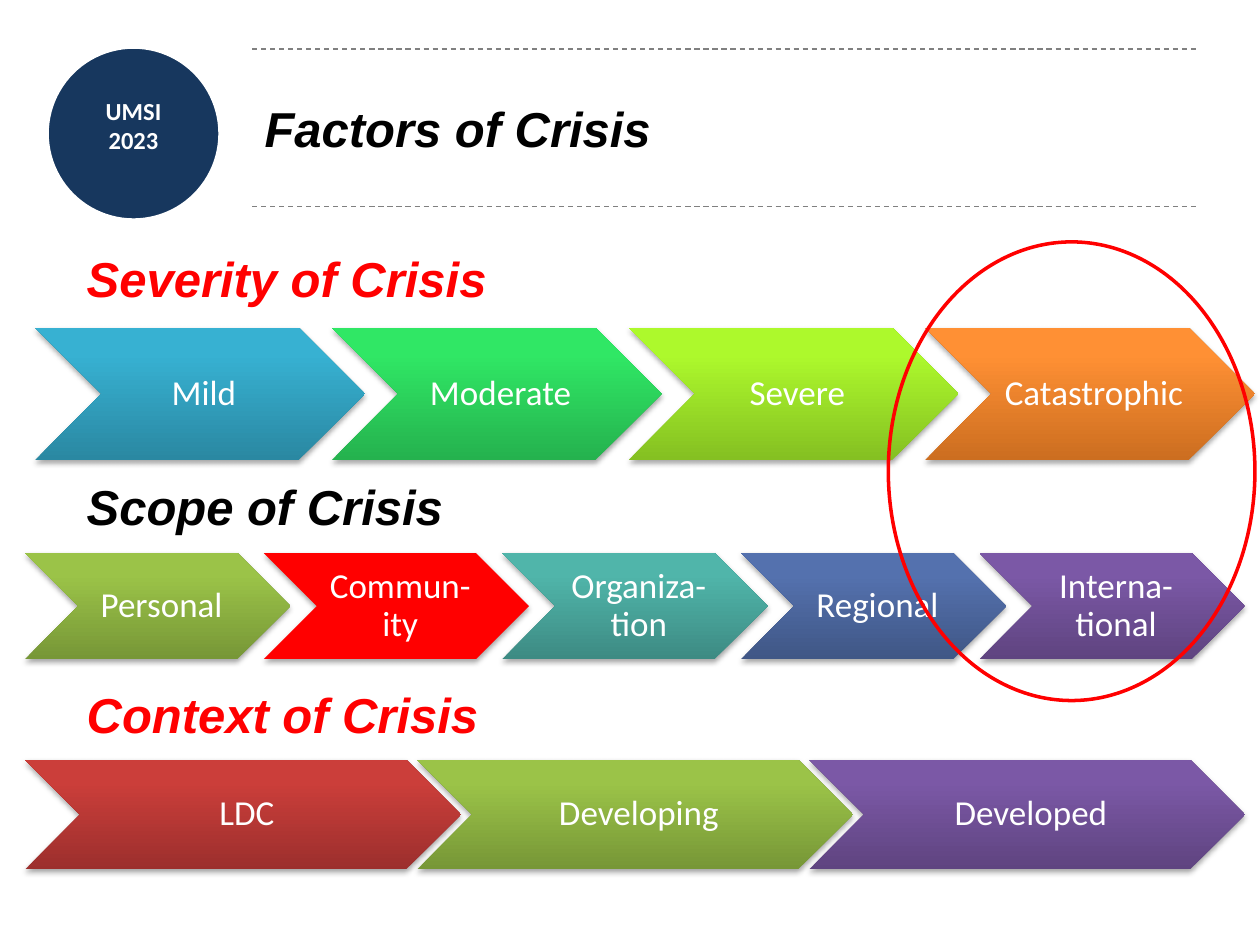
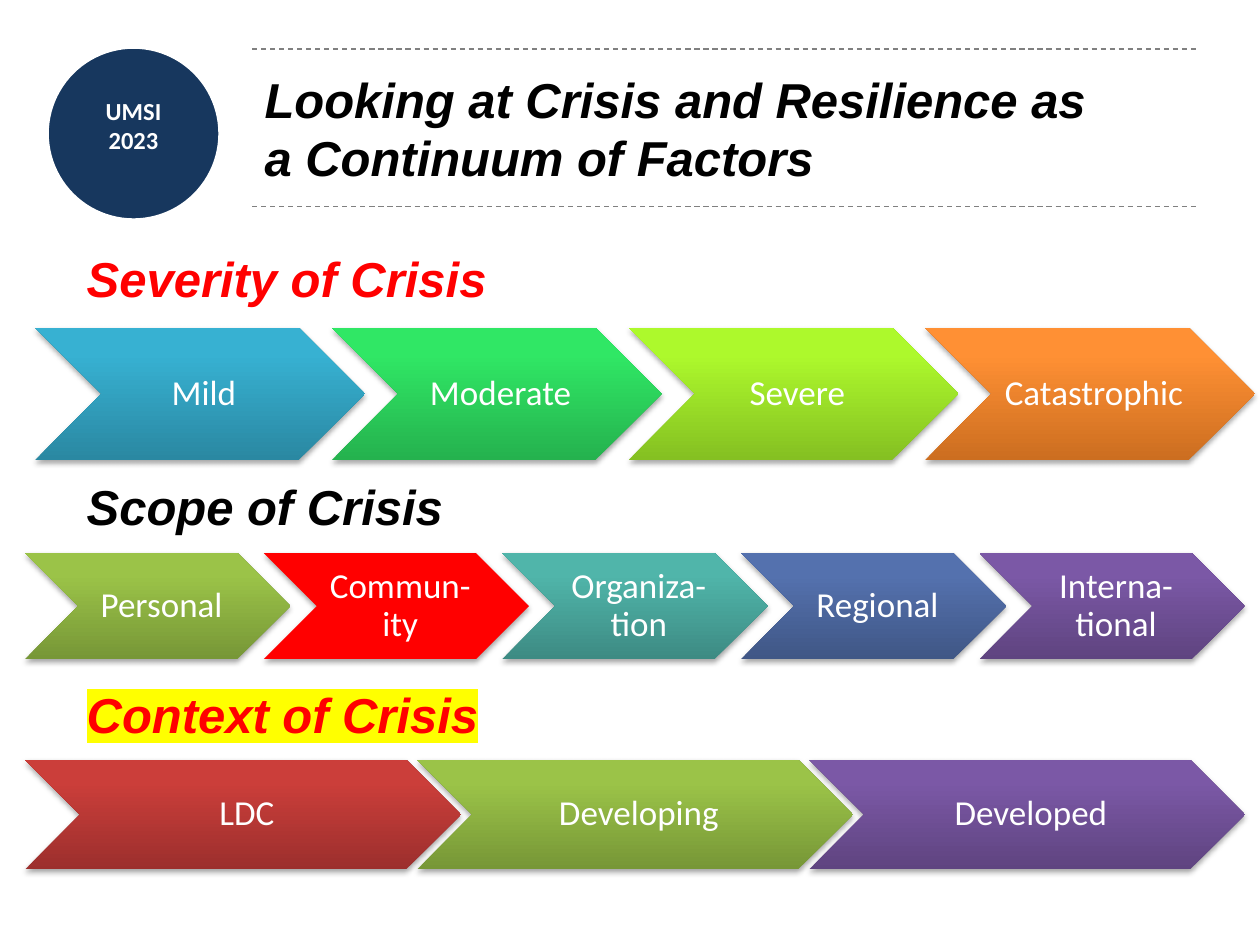
from lxml import etree
from pptx import Presentation
from pptx.dml.color import RGBColor
from pptx.enum.dml import MSO_LINE
from pptx.enum.shapes import MSO_CONNECTOR, MSO_SHAPE
from pptx.enum.text import MSO_ANCHOR, PP_ALIGN
from pptx.oxml.ns import qn
from pptx.util import Inches, Pt

COLORS = {
    "white": "FFFFFF", "black": "000000", "red": "FF0000", "navy": "17375E",
    "gray": "808080", "yellow": "FFFF00",
}
GRADIENTS = {
    "green": ("779737", "9BC348"), "teal": ("3D8B83", "50B5AA"),
    "blue": ("405786", "5471AE"), "purple": ("5F4480", "7B58A6"),
    "sky": ("2A88A2", "37B1D2"), "mint": ("25B24E", "30E765"),
    "lime": ("85C022", "ADF92C"), "orange": ("CC6E20", "FF9034"),
    "brick": ("9C2F2D", "CB3E3A"),
}
SEVERITY = [("Mild", "sky"), ("Moderate", "mint"), ("Severe", "lime"),
            ("Catastrophic", "orange")]
SCOPE = [("Personal", "green"), ("Commun-ity", "red"), ("Organiza-tion", "teal"),
         ("Regional", "blue"), ("Interna-tional", "purple")]
CONTEXT = [("LDC", "brick"), ("Developing", "green"), ("Developed", "purple")]
ROW_WIDTH = 9.68
PITCH = 0.9


def rgb(name):
    """Return the named colour."""
    return RGBColor.from_string(COLORS[name])


def style(p, size, color, name="Calibri", bold=None, italic=None):
    """Set the font of a whole paragraph."""
    f = p.font
    f.size, f.name, f.bold, f.italic = Pt(size), name, bold, italic
    f.color.rgb = rgb(color)


def add_effects(shape, shadow=False):
    """Replace the theme effects with none or with a soft shadow below."""
    effects = etree.SubElement(shape._element.spPr, qn("a:effectLst"))
    if shadow:
        outer = etree.SubElement(effects, qn("a:outerShdw"), blurRad="40000",
                                 dist="23000", dir="5400000", rotWithShape="0")
        clr = etree.SubElement(outer, qn("a:srgbClr"), val=COLORS["black"])
        etree.SubElement(clr, qn("a:alpha"), val="35000")


def add_ellipse(s, x, y, w, h, line, weight, fill=None):
    """Add an outlined ellipse, filled if a colour is given."""
    sp = s.shapes.add_shape(MSO_SHAPE.OVAL, Inches(x), Inches(y), Inches(w), Inches(h))
    sp.shadow.inherit = False
    sp.line.color.rgb, sp.line.width = rgb(line), Pt(weight)
    if fill:
        sp.fill.solid()
        sp.fill.fore_color.rgb = rgb(fill)
    else:
        sp.fill.background()
    return sp


def add_badge(s, x, y, d):
    """Add the round badge with the event name."""
    tf = add_ellipse(s, x, y, d, d, "white", 2.5, "navy").text_frame
    tf.margin_left = tf.margin_right = tf.margin_top = 0
    tf.margin_bottom = Inches(0.13)
    tf.vertical_anchor = MSO_ANCHOR.MIDDLE
    tf.text = "UMSI\n2023"
    for p in tf.paragraphs:
        p.alignment = PP_ALIGN.CENTER
        style(p, 14, "white", bold=True)


def add_title(s, text, x, y, w, h):
    """Place the title between two dashed rules."""
    for rule_y in (y, y + h):
        rule = s.shapes.add_connector(MSO_CONNECTOR.STRAIGHT, Inches(x), Inches(rule_y),
                                      Inches(x + w), Inches(rule_y))
        rule.line.color.rgb, rule.line.width = rgb("gray"), Pt(0.75)
        rule.line.dash_style = MSO_LINE.DASH
        add_effects(rule)
    title = s.shapes.title
    title.left, title.top, title.width, title.height = map(Inches, (x, y, w, h))
    tf = title.text_frame
    tf.text = text
    tf.word_wrap, tf.vertical_anchor = True, MSO_ANCHOR.MIDDLE
    p = tf.paragraphs[0]
    p.alignment = PP_ALIGN.LEFT
    style(p, 28, "black", "Arial", True, True)


def add_heading(s, text, x, y, color, highlight=False):
    """Add the heading above a row of chevrons."""
    tf = s.shapes.add_textbox(Inches(x), Inches(y), Inches(3.6), Inches(0.57)).text_frame
    tf.word_wrap = True
    p = tf.paragraphs[0]
    r = p.add_run()
    r.text = text
    style(p, 28, color, "Arial", True, True)
    if highlight:
        mark = etree.SubElement(r._r.get_or_add_rPr(), qn("a:highlight"))
        etree.SubElement(mark, qn("a:srgbClr"), val=COLORS["yellow"])


def fill_chevron(fill, color):
    """Fill with a vertical gradient, or plainly where none has that name."""
    if color not in GRADIENTS:
        fill.solid()
        fill.fore_color.rgb = rgb(color)
        return
    fill.gradient()
    fill.gradient_angle = 90
    for stop, position, value in zip(fill.gradient_stops, (0, 0.8), GRADIENTS[color]):
        stop.position = position
        stop.color.rgb = RGBColor.from_string(value)


def add_chevrons(s, steps, x, y, h):
    """Add a row of overlapping chevrons that spans the row width."""
    w = ROW_WIDTH / (1 + PITCH * (len(steps) - 1))
    for i, (label, color) in enumerate(steps):
        sp = s.shapes.add_shape(MSO_SHAPE.CHEVRON, Inches(x + i * PITCH * w), Inches(y),
                                Inches(w), Inches(h))
        fill_chevron(sp.fill, color)
        sp.line.fill.background()
        add_effects(sp, shadow=True)
        tf = sp.text_frame
        tf.margin_left = Inches(0.09)
        tf.margin_right = tf.margin_top = tf.margin_bottom = Inches(0.03)
        tf.word_wrap, tf.vertical_anchor = True, MSO_ANCHOR.MIDDLE
        tf.text = label
        p = tf.paragraphs[0]
        p.alignment, p.line_spacing = PP_ALIGN.CENTER, 0.9
        style(p, 20, "white")


def add_factors_slide(prs, title, highlight_context=False):
    """Add a slide with the three factors of crisis."""
    s = prs.slides.add_slide(prs.slide_layouts[5])
    add_badge(s, 0.37, 0.37, 1.38)
    add_title(s, title, 2, 0.39, 7.5, 1.25)
    add_chevrons(s, SCOPE, 0.2, 4.39, 0.84)
    add_heading(s, "Scope of Crisis", 0.59, 3.73, "black")
    add_chevrons(s, SEVERITY, 0.28, 2.6, 1.05)
    add_heading(s, "Severity of Crisis", 0.59, 1.92, "red")
    add_chevrons(s, CONTEXT, 0.2, 6.03, 0.87)
    add_heading(s, "Context of Crisis", 0.59, 5.38, "red", highlight_context)
    return s


def main():
    """Build and save the presentation."""
    prs = Presentation()
    prs.slide_width, prs.slide_height = Inches(10), Inches(7.5)
    s = add_factors_slide(prs, "Factors of Crisis")
    add_ellipse(s, 7.05, 1.92, 2.91, 3.64, "red", 2)
    add_factors_slide(prs, "Looking at Crisis and Resilience as\va Continuum of Factors",
                      highlight_context=True)
    prs.save("out.pptx")


if __name__ == "__main__":
    main()
